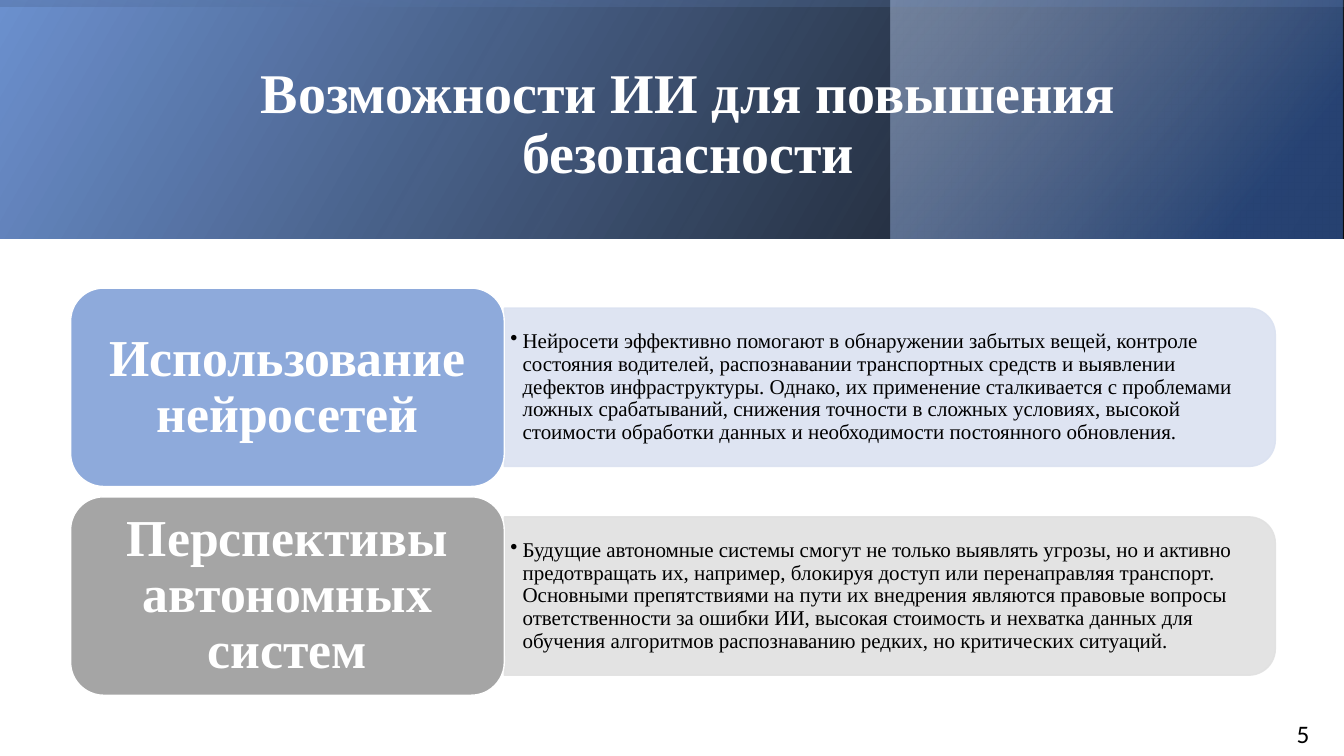
"""Build the slide on how AI can improve security."""
from pptx import Presentation, util as u
from pptx.dml.color import RGBColor
from pptx.enum import shapes, text
from pptx.oxml import parse_xml
from pptx.oxml.ns import nsdecls
from lxml import etree

TITLE = "Возможности ИИ для повышения безопасности"
PAGE_NUMBER = "5"
TOPICS = [
    ("Использование нейросетей",
     "Нейросети эффективно помогают в обнаружении забытых вещей, контроле состояния водителей, "
     "распознавании транспортных средств и выявлении дефектов инфраструктуры. Однако, их применение "
     "сталкивается с проблемами ложных срабатываний, снижения точности в сложных условиях, высокой "
     "стоимости обработки данных и необходимости постоянного обновления.",
     "8EAADB", "DBE2F1"),
    ("Перспективы автономных систем",
     "Будущие автономные системы смогут не только выявлять угрозы, но и активно предотвращать их, "
     "например, блокируя доступ или перенаправляя транспорт. Основными препятствиями на пути их "
     "внедрения являются правовые вопросы ответственности за ошибки ИИ, высокая стоимость и нехватка "
     "данных для обучения алгоритмов распознаванию редких, но критических ситуаций.",
     "A5A5A5", "E1E1E1"),
]
THEME = {
    "serif": "Times New Roman", "sans": "Calibri",
    "light": "FFFFFF", "dark": "000000",
    "title": 40, "heading": 37, "detail": 15, "number": 18,
    "panel_alpha": 90,
    "band": ([(0, "000000", 96), (100, "6C91CF", 100)], 330),
    "corner": ([(19, "335B9F", 68), (100, "BBCCE9", 48)], 320),
    "shade": ([(23, "6C91CF", 16), (99, "000000", 45)], 350),
}
WIDTH, HEIGHT, BAND = 33.87, 19.05, 6.02
CARD_LEFT, CARD_TOP, CARD_WIDTH, CARD_HEIGHT, PITCH = 1.78, 7.26, 10.93, 5.0, 5.26
PANEL_WIDTH, PANEL_HEIGHT = 19.43, 3.99
DETAIL_WIDTH, DETAIL_HEIGHT = 19.23, 3.61
HANGING = 0.31


def add_shape(page, kind, left, top, width, height):
    shape = page.shapes.add_shape(kind, u.Cm(left), u.Cm(top), u.Cm(width), u.Cm(height))
    shape.shadow.inherit = False
    shape.line.fill.background()
    return shape


def add_gradient(page, left, top, width, height, gradient, rotation=0):
    shape = add_shape(page, shapes.MSO_SHAPE.RECTANGLE, left, top, width, height)
    shape.rotation = rotation
    properties = shape._element.spPr
    properties.xfrm.set("flipH", "1")
    stops, angle = gradient
    marks = "".join(
        f'<a:gs pos="{place * 1000}"><a:srgbClr val="{color}">'
        f'<a:alpha val="{alpha * 1000}"/></a:srgbClr></a:gs>'
        for place, color, alpha in stops)
    properties.prstGeom.addnext(parse_xml(
        f'<a:gradFill rotWithShape="1" {nsdecls("a")}><a:gsLst>{marks}</a:gsLst>'
        f'<a:lin ang="{angle * 60000}" scaled="0"/></a:gradFill>'))


def paint(shape, fill, line):
    shape.fill.solid()
    shape.fill.fore_color.rgb = RGBColor.from_string(fill)
    shape.line.color.rgb = RGBColor.from_string(line)
    shape.line.width = u.Pt(1)


def add_box(page, left, top, width, height):
    return page.shapes.add_textbox(u.Cm(left), u.Cm(top), u.Cm(width), u.Cm(height))


def write(shape, words, size, color, font="serif", bold=False, inset=None, spacing=0.9, bullet=False):
    frame = shape.text_frame
    frame.word_wrap = True
    frame.vertical_anchor = text.MSO_ANCHOR.MIDDLE
    if inset:
        frame.margin_left = frame.margin_right = u.Cm(inset[0])
        frame.margin_top = frame.margin_bottom = u.Cm(inset[1])
    para = frame.paragraphs[0]
    para.alignment = text.PP_ALIGN.LEFT if bullet else text.PP_ALIGN.CENTER
    para.line_spacing = spacing
    if bullet:
        settings = para._p.get_or_add_pPr()
        settings.set("marL", str(u.Cm(HANGING)))
        settings.set("indent", str(-u.Cm(HANGING)))
        settings.append(parse_xml(f'<a:buChar char="•" {nsdecls("a")}/>'))
    span = para.add_run()
    span.text = words
    span.font.name = THEME[font]
    span.font.size = u.Pt(THEME[size])
    span.font.bold = bold
    span.font.color.rgb = RGBColor.from_string(THEME[color])


def add_topic(page, top, heading, detail, card_color, panel_color):
    middle = top + CARD_HEIGHT / 2
    panel_left = CARD_LEFT + CARD_WIDTH
    panel = add_shape(page, shapes.MSO_SHAPE.ROUND_2_SAME_RECTANGLE,
                      panel_left + (PANEL_WIDTH - PANEL_HEIGHT) / 2, middle - PANEL_WIDTH / 2,
                      PANEL_HEIGHT, PANEL_WIDTH)
    panel.rotation = 90
    paint(panel, panel_color, panel_color)
    for color in panel._element.spPr.findall(".//{*}srgbClr"):
        alpha = etree.SubElement(color, color.tag.replace("srgbClr", "alpha"))
        alpha.set("val", str(THEME["panel_alpha"] * 1000))

    box = add_box(page, panel_left, middle - DETAIL_HEIGHT / 2, DETAIL_WIDTH, DETAIL_HEIGHT)
    write(box, detail, "detail", "dark", inset=(0.15, 0.08), bullet=True)

    card = add_shape(page, shapes.MSO_SHAPE.ROUNDED_RECTANGLE, CARD_LEFT, top, CARD_WIDTH, CARD_HEIGHT)
    paint(card, card_color, THEME["light"])
    write(card, heading, "heading", "light", bold=True, inset=(0.38, 0.2))


def main():
    deck = Presentation()
    deck.slide_width, deck.slide_height = u.Cm(WIDTH), u.Cm(HEIGHT)
    page = deck.slides.add_slide(deck.slide_layouts[6])

    add_gradient(page, 0, 0, WIDTH, BAND, THEME["band"])
    add_gradient(page, 22.45, 0, 11.38, BAND, THEME["corner"])
    offset = (WIDTH - BAND) / 2
    add_gradient(page, offset, -offset, BAND, WIDTH, THEME["shade"], rotation=270)
    write(add_box(page, 3.84, 0.97, 27, 4.37), TITLE, "title", "light", bold=True)

    for index, topic in enumerate(TOPICS):
        add_topic(page, CARD_TOP + index * PITCH, *topic)

    number = add_box(page, 32.39, 17.98, 0.89, 1.02)
    write(number, PAGE_NUMBER, "number", "dark", font="sans", spacing=1.0)
    deck.save("out.pptx")


if __name__ == "__main__":
    main()
